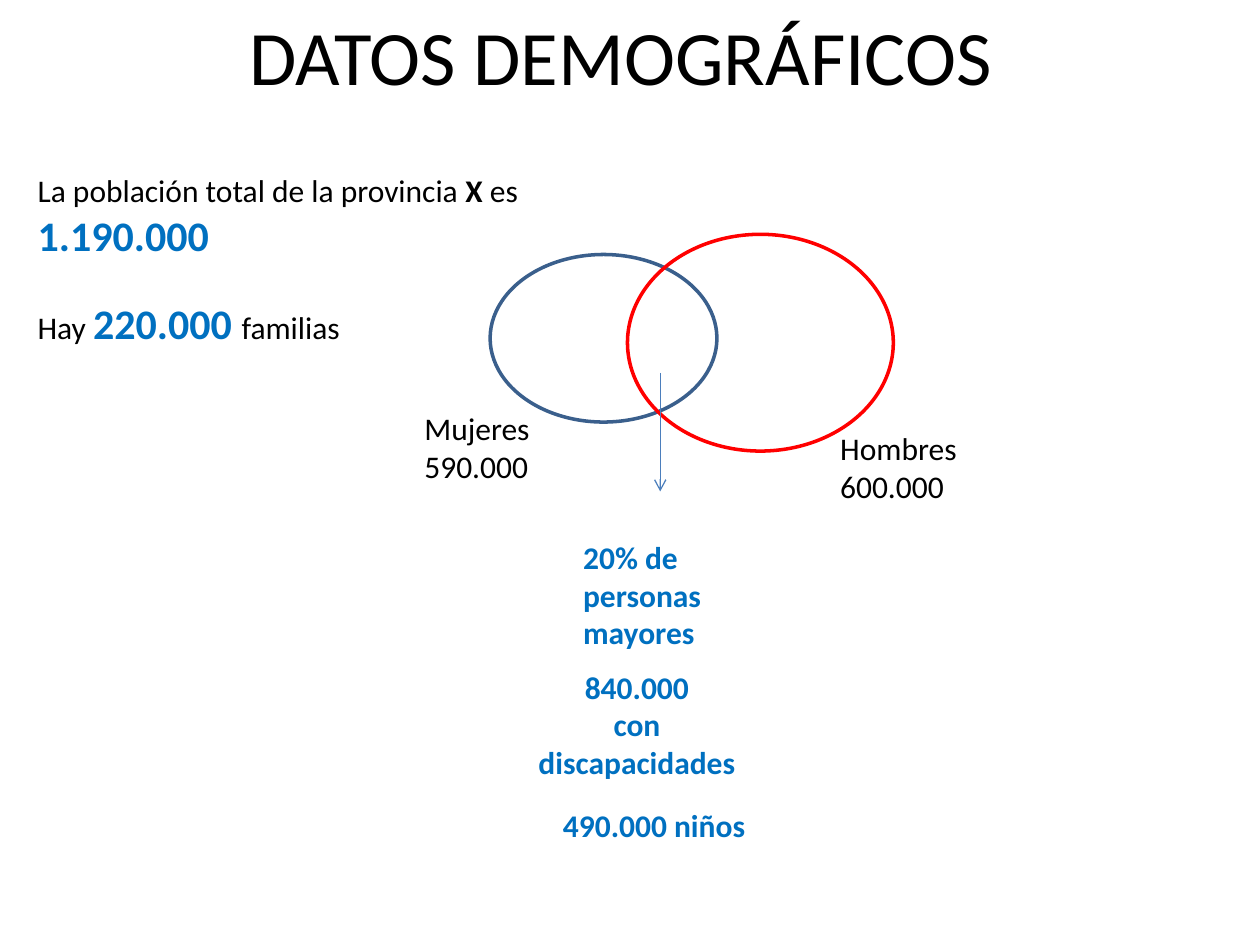
"""Build the slide of demographic data with two overlapping population circles."""
import pptx
import pptx.dml.color
import pptx.enum.shapes
import pptx.enum.text
import pptx.oxml
import pptx.oxml.ns
import pptx.util

RGB = pptx.dml.color.RGBColor.from_string
ALIGN = pptx.enum.text.PP_ALIGN
THEME = {
    "font": "Calibri",
    "text": RGB("000000"),
    "accent": RGB("0070C0"),
    "women": RGB("3A5F8C"),
    "men": RGB("FF0000"),
    "arrow": RGB("4B7EBC"),
    "title": pptx.util.Pt(44),
    "figure": pptx.util.Pt(24),
    "body": pptx.util.Pt(18),
    "outline": pptx.util.Pt(2),
    "arrow_line": pptx.util.Pt(0.75),
}

deck = pptx.Presentation()
deck.slide_width = pptx.util.Inches(10)
deck.slide_height = pptx.util.Inches(7.5)
slide = deck.slides.add_slide(deck.slide_layouts[6])
column = deck.slide_width / 100
row = deck.slide_height / 75


def place(left, top, width, height):
    return [round(left * column), round(top * row), round(width * column), round(height * row)]


def add_text(box, lines, size="body", color="text", bold=False, align=ALIGN.LEFT, wrap=True):
    frame = slide.shapes.add_textbox(*place(*box)).text_frame
    frame.word_wrap = wrap
    for index, line in enumerate(lines):
        paragraph = frame.paragraphs[0] if index == 0 else frame.add_paragraph()
        paragraph.alignment = align
        paragraph.font.name = THEME["font"]
        paragraph.font.size = THEME[size]
        paragraph.font.color.rgb = THEME[color]
        paragraph.font.bold = bold
        paragraph.text = line
    return frame


title = add_text((4.3, 0, 90, 8.7), ["DATOS DEMOGRÁFICOS"], size="title", align=ALIGN.CENTER)
title.vertical_anchor = pptx.enum.text.MSO_ANCHOR.MIDDLE

add_text((65.7, 33.6, 13.4, 7), ["Hombres", "600.000"])

for group, box in [("women", (38.9, 20.2, 18, 13.3)), ("men", (49.8, 18.6, 21.1, 17.2))]:
    circle = slide.shapes.add_shape(pptx.enum.shapes.MSO_SHAPE.OVAL, *place(*box))
    circle.shadow.inherit = False
    circle.fill.background()
    circle.line.color.rgb = THEME[group]
    circle.line.width = THEME["outline"]

add_text((32.7, 32, 10.4, 7), ["Mujeres", "590.000"], wrap=False)
add_text((45.3, 42.2, 15.7, 10), ["20% de personas mayores"], color="accent", bold=True)

arrow = slide.shapes.add_connector(
    pptx.enum.shapes.MSO_CONNECTOR.STRAIGHT, *place(52.4, 29.6, 52.4, 39)
)
arrow.line.color.rgb = THEME["arrow"]
arrow.line.width = THEME["arrow_line"]
arrow_head = pptx.oxml.parse_xml(f'<a:tailEnd {pptx.oxml.ns.nsdecls("a")} type="arrow"/>')
arrow.line._get_or_add_ln().append(arrow_head)
no_effects = pptx.oxml.parse_xml(f'<a:effectLst {pptx.oxml.ns.nsdecls("a")}/>')
arrow._element.spPr.append(no_effects)

population = add_text((2, 13.1, 51.2, 15), ["", ""])
population_runs = [
    [
        ("La población total de la provincia ", "body", "text", False),
        ("X", "body", "text", True),
        (" es ", "body", "text", False),
        ("1.190.000", "figure", "accent", True),
    ],
    [
        ("Hay ", "body", "text", False),
        ("220.000 ", "figure", "accent", True),
        ("familias", "body", "text", False),
    ],
]
for paragraph, runs in zip(population.paragraphs, population_runs):
    for wording, size, color, bold in runs:
        run = paragraph.add_run()
        run.text = wording
        run.font.name = THEME["font"]
        run.font.size = THEME[size]
        run.font.color.rgb = THEME[color]
        run.font.bold = bold
population.paragraphs[1].space_before = pptx.util.Pt(22)

add_text(
    (40.6, 52.5, 19.9, 10),
    ["840.000", "con discapacidades"],
    color="accent",
    bold=True,
    align=ALIGN.CENTER,
)
add_text((43.7, 63.5, 19.7, 4), ["490.000 niños"], color="accent", bold=True)

deck.save("out.pptx")
